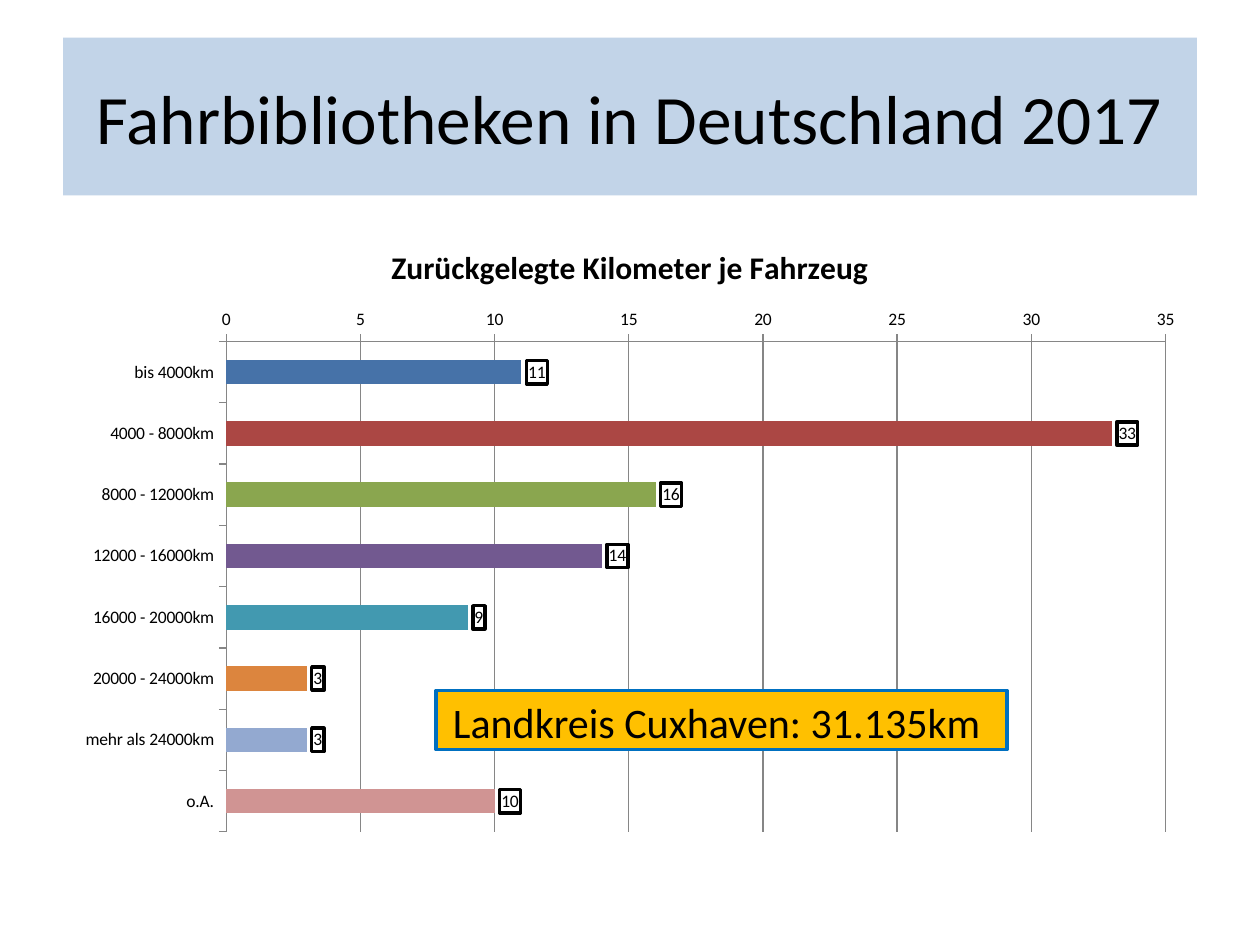
from lxml.etree import SubElement
from pptx import Presentation
from pptx.chart.data import CategoryChartData
from pptx.dml.color import RGBColor
from pptx.enum.chart import XL_CHART_TYPE, XL_LABEL_POSITION, XL_TICK_MARK
from pptx.enum.shapes import MSO_SHAPE
from pptx.enum.text import MSO_ANCHOR, MSO_AUTO_SIZE, PP_ALIGN
from pptx.oxml.ns import qn
from pptx.util import Cm, Pt

FONT = "Calibri"
COLORS = {
    "text": "000000",
    "banner": "4F81BD",
    "callout": "FFC000",
    "callout_line": "0070C0",
    "axis": "868686",
}
# Distance class, number of vehicles, bar colour
DISTANCES = [
    ("bis 4000km", 11, "4672A8"),
    ("4000 - 8000km", 33, "AB4744"),
    ("8000 - 12000km", 16, "8AA64F"),
    ("12000 - 16000km", 14, "725990"),
    ("16000 - 20000km", 9, "4299B0"),
    ("20000 - 24000km", 3, "DC853E"),
    ("mehr als 24000km", 3, "93A9D0"),
    ("o.A.", 10, "D09493"),
]


def rgb(name):
    return RGBColor.from_string(COLORS.get(name, name))


def paint(fill, color):
    fill.solid()
    fill.fore_color.rgb = rgb(color)


def style_font(font, size, bold=False):
    font.name = FONT
    font.size = Pt(size)
    font.bold = bold
    font.color.rgb = rgb("text")


def write_line(frame, text, size, anchor):
    frame.word_wrap = True
    frame.auto_size = MSO_AUTO_SIZE.NONE
    frame.vertical_anchor = anchor
    para = frame.paragraphs[0]
    para.alignment = PP_ALIGN.CENTER
    span = para.add_run()
    span.text = text
    style_font(span.font, size)


def add_title(page, text):
    title = page.shapes.title
    title.left, title.top = Cm(1.27), Cm(0.76)
    title.width, title.height = Cm(22.86), Cm(3.18)
    paint(title.fill, "banner")
    # Let the white background shine through the banner
    color = title.fill._xPr.find(qn("a:solidFill"))[0]
    SubElement(color, qn("a:alpha"), val="34000")
    write_line(title.text_frame, text, 39.6, MSO_ANCHOR.MIDDLE)


def style_axis(axis):
    axis.major_tick_mark = XL_TICK_MARK.OUTSIDE
    axis.minor_tick_mark = XL_TICK_MARK.NONE
    axis.format.line.color.rgb = rgb("axis")
    axis.format.line.width = Pt(0.75)


def add_distance_chart(page, heading):
    data = CategoryChartData()
    data.categories = [label for label, _, _ in DISTANCES]
    data.add_series("Series 1", [count for _, count, _ in DISTANCES])
    chart = page.shapes.add_chart(
        XL_CHART_TYPE.BAR_CLUSTERED, Cm(1.27), Cm(4.45), Cm(22.86), Cm(12.57), data
    ).chart
    style_font(chart.font, 10)
    chart.has_legend = False

    # Heading
    chart.has_title = True
    span = chart.chart_title.text_frame.paragraphs[0].add_run()
    span.text = heading
    style_font(span.font, 18, bold=True)
    chart.chart_title.include_in_layout = False

    # Axes
    style_axis(chart.category_axis)
    chart.category_axis.reverse_order = True
    scale = chart.value_axis
    style_axis(scale)
    scale.minimum_scale, scale.maximum_scale, scale.major_unit = 0, 35, 5
    scale.has_major_gridlines = True
    grid = scale.major_gridlines.format.line
    grid.color.rgb = rgb("axis")
    grid.width = Pt(0.75)

    # Bars
    plot = chart.plots[0]
    plot.gap_width = 150
    plot.vary_by_categories = True
    series = plot.series[0]
    for index, (_, _, color) in enumerate(DISTANCES):
        paint(series.points[index].format.fill, color)
    add_framed_labels(series)


def add_framed_labels(series):
    labels = series.data_labels
    labels.show_value = True
    labels.position = XL_LABEL_POSITION.OUTSIDE_END
    style_font(labels.font, 10)
    # The frame comes right before the text properties
    frame = labels._element.makeelement(qn("c:spPr"))
    labels._element.find(qn("c:txPr")).addprevious(frame)
    line = SubElement(frame, qn("a:ln"), w=str(Pt(2)))
    SubElement(SubElement(line, qn("a:solidFill")), qn("a:srgbClr"), val=COLORS["text"])


def add_callout(page, text):
    box = page.shapes.add_shape(
        MSO_SHAPE.RECTANGLE, Cm(8.79), Cm(13.92), Cm(11.51), Cm(1.19)
    )
    box.shadow.inherit = False
    paint(box.fill, "callout")
    box.line.color.rgb = rgb("callout_line")
    box.line.width = Pt(2)
    write_line(box.text_frame, text, 24, MSO_ANCHOR.TOP)


def main():
    deck = Presentation()
    deck.slide_width, deck.slide_height = Cm(25.4), Cm(19.05)
    page = deck.slides.add_slide(deck.slide_layouts[5])
    add_title(page, "Fahrbibliotheken in Deutschland 2017")
    add_distance_chart(page, "Zurückgelegte Kilometer je Fahrzeug")
    add_callout(page, "Landkreis Cuxhaven: 31.135km ")
    deck.save("out.pptx")


if __name__ == "__main__":
    main()
